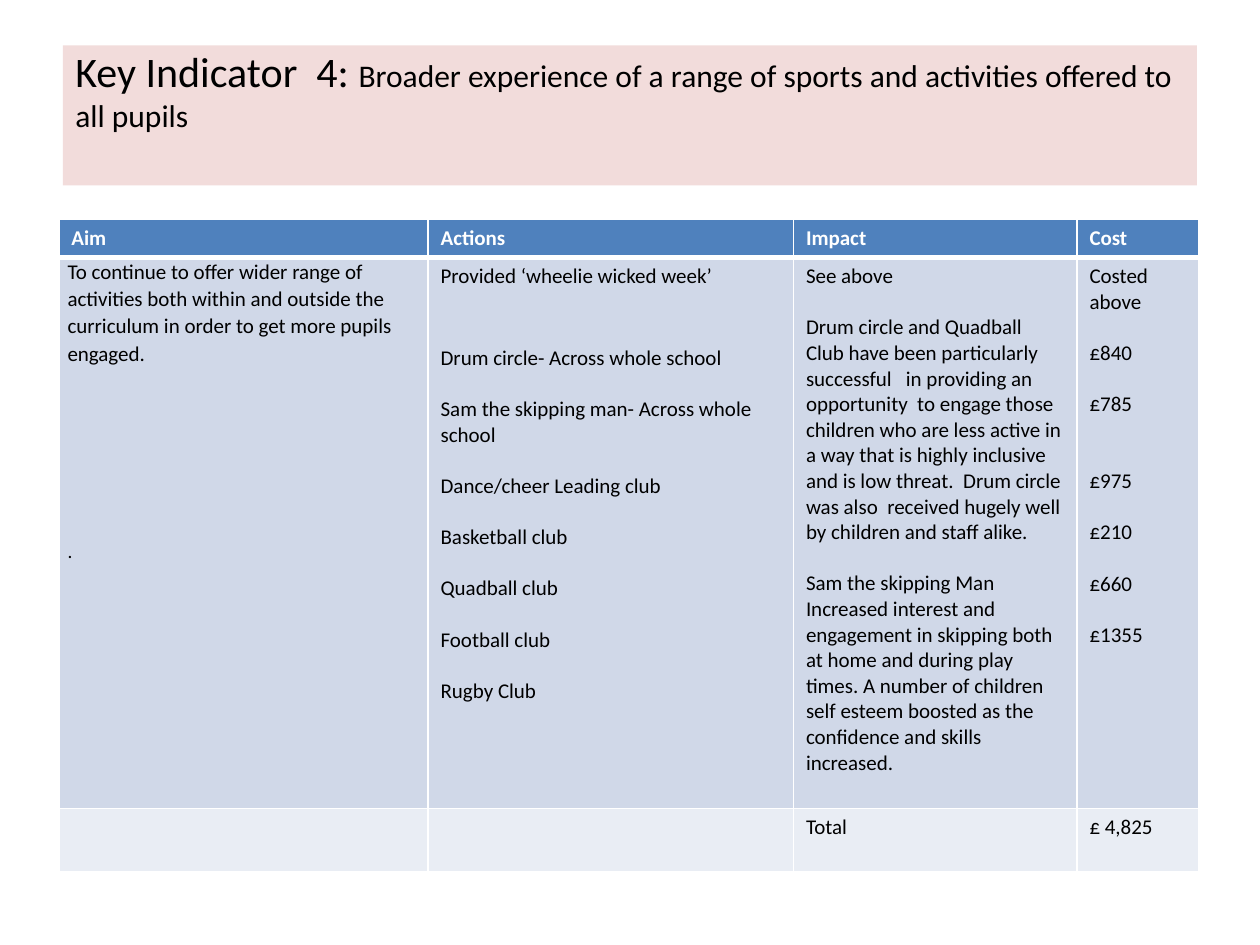
from lxml import etree
from pptx import Presentation
from pptx import util as u
from pptx.dml import color
from pptx.enum import shapes, text
from pptx.oxml import ns

FONT = "Calibri"
LINE = 14.65
COLUMNS = [211, 208.8, 162, 69.8]
ROWS = [21.2, 315, 36]
HEADINGS = ["Aim", "Actions", "Impact", "Cost"]
AIM = [
    ("To continue to offer wider range of activities both within and outside "
     "the curriculum in order to get more pupils engaged.", 0),
    (".", 98),
]
ACTIONS = [
    ("Provided ‘wheelie wicked week’", 0),
    ("Drum circle- Across whole school", 32),
    ("Sam the skipping man- Across whole school", LINE),
    ("Dance/cheer Leading club", LINE),
    ("Basketball club", LINE),
    ("Quadball club", LINE),
    ("Football club", LINE),
    ("Rugby Club", LINE),
]
IMPACT = [
    ("See above", 0),
    ("Drum circle and Quadball Club have been particularly successful   in "
     "providing an opportunity  to engage those children who are less active "
     "in a way that is highly inclusive and is low threat.  Drum circle was "
     "also  received hugely well by children and staff alike.", LINE),
    ("Sam the skipping Man", LINE),
    ("Increased interest and engagement in skipping both at home and during "
     "play times. A number of children self esteem boosted as the confidence "
     "and skills increased.", 0),
]
COST = [
    ("Costed above", 0),
    ("£840", LINE),
    ("£785", LINE),
    ("£975", 2 * LINE),
    ("£210", LINE),
    ("£660", LINE),
    ("£1355", LINE),
]
TOTALS = [[], [], [("Total", 0)], [("£ 4,825", 0)]]


def rgb(value):
    return color.RGBColor.from_string(value)


def style_font(font, size, shade, bold=False):
    font.name = FONT
    font.size = u.Pt(size)
    font.bold = bold
    font.color.rgb = rgb(shade)


def add_title(page):
    box = page.shapes.add_shape(shapes.MSO_SHAPE.RECTANGLE,
                                u.Pt(36), u.Pt(26), u.Pt(648), u.Pt(80))
    box.shadow.inherit = False
    box.fill.solid()
    box.fill.fore_color.rgb = rgb("F2DCDB")
    box.line.fill.background()
    frame = box.text_frame
    frame.word_wrap = True
    frame.vertical_anchor = text.MSO_ANCHOR.TOP
    frame.margin_top = u.Pt(0)
    para = frame.paragraphs[0]
    para.alignment = text.PP_ALIGN.LEFT
    for words, size in [
        ("Key Indicator  4: ", 24),
        ("Broader experience of a range of sports and activities offered to all pupils", 18),
    ]:
        span = para.add_run()
        span.text = words
        style_font(span.font, size, "000000")


def set_borders(cell, top, bottom):
    properties = cell._tc.get_or_add_tcPr()
    for side, width in [("L", 1), ("R", 1), ("T", top), ("B", bottom)]:
        line = etree.SubElement(properties, ns.qn(f"a:ln{side}"), w=str(u.Pt(width)))
        fill = etree.SubElement(line, ns.qn("a:solidFill"))
        etree.SubElement(fill, ns.qn("a:srgbClr"), val="FFFFFF")


def fill_cell(cell, entries, fill, shade="000000", bold=False):
    cell.fill.solid()
    cell.fill.fore_color.rgb = rgb(fill)
    frame = cell.text_frame
    frame.text = "\n".join(words for words, gap in entries)
    for para, (words, gap) in zip(frame.paragraphs, entries):
        if gap:
            para.space_before = u.Pt(gap)
        for span in para.runs:
            style_font(span.font, 12, shade, bold)


def add_plan(page):
    table = page.shapes.add_table(len(ROWS), len(COLUMNS), u.Pt(33.6), u.Pt(125.2),
                                  u.Pt(sum(COLUMNS)), u.Pt(sum(ROWS))).table
    for column, width in zip(table.columns, COLUMNS):
        column.width = u.Pt(width)
    for row, height in zip(table.rows, ROWS):
        row.height = u.Pt(height)
    bands = [
        ([[(heading, 0)] for heading in HEADINGS], "4F81BD", "FFFFFF", True, 1, 3),
        ([AIM, ACTIONS, IMPACT, COST], "D0D8E8", "000000", False, 3, 1),
        (TOTALS, "E9EDF4", "000000", False, 1, 1),
    ]
    for row, (contents, fill, shade, bold, top, bottom) in zip(table.rows, bands):
        for cell, entries in zip(row.cells, contents):
            set_borders(cell, top, bottom)
            fill_cell(cell, entries, fill, shade, bold)
    aim = table.cell(1, 0)
    aim.margin_left = aim.margin_right = u.Pt(5)
    aim.margin_top = aim.margin_bottom = u.Pt(0)
    for para in aim.text_frame.paragraphs:
        para.line_spacing = 1.07
    aim.text_frame.paragraphs[-1].runs[0].font.size = u.Pt(11)


def main():
    deck = Presentation()
    deck.slide_width = u.Pt(720)
    deck.slide_height = u.Pt(540)
    page = deck.slides.add_slide(deck.slide_layouts[6])
    add_plan(page)
    add_title(page)
    deck.save("out.pptx")


if __name__ == "__main__":
    main()
